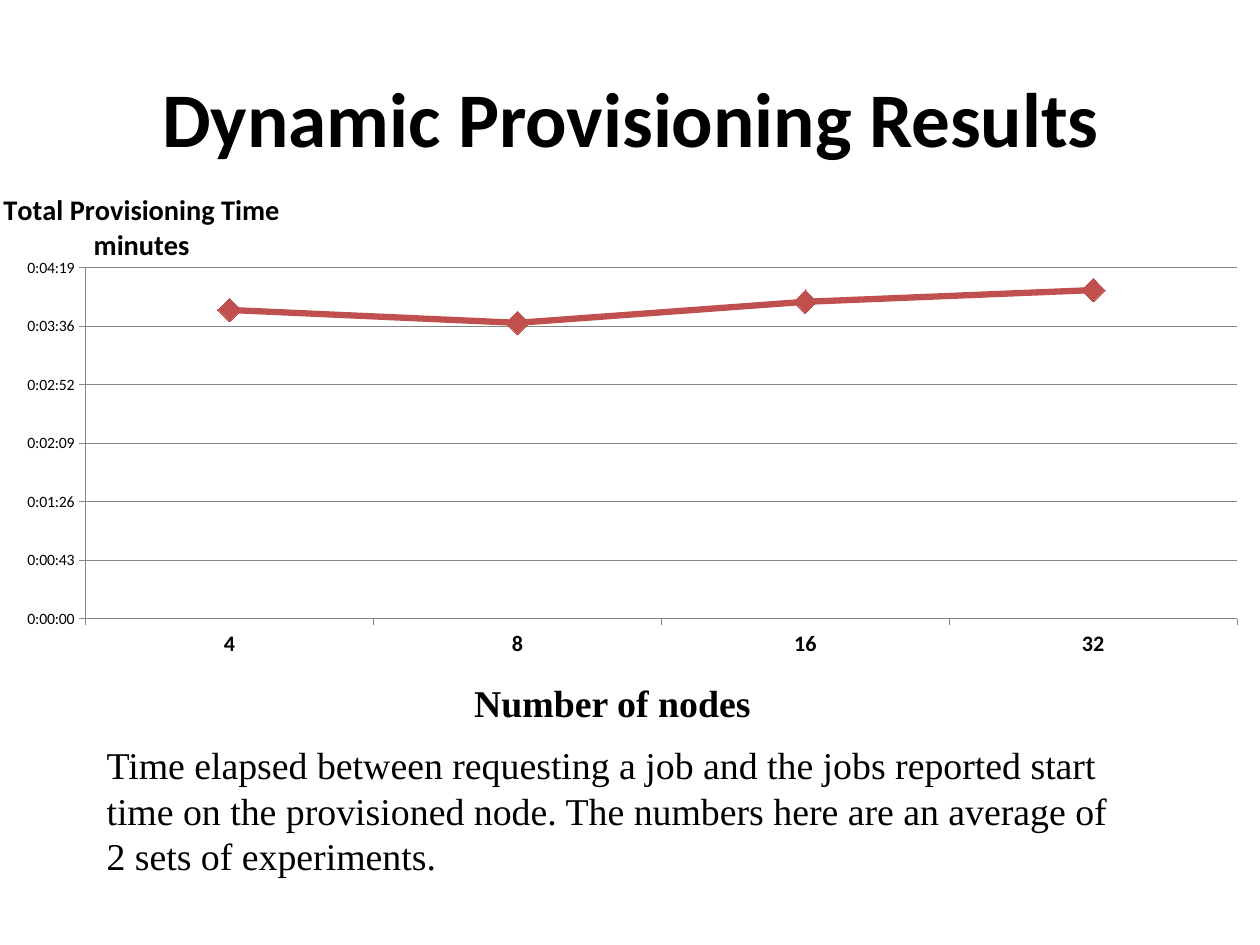
from lxml.etree import SubElement
from pptx import Presentation
from pptx.chart.data import CategoryChartData
from pptx.dml.color import RGBColor
from pptx.enum.chart import XL_CHART_TYPE as ChartType, XL_MARKER_STYLE as Marker, XL_TICK_MARK as Tick
from pptx.enum.text import MSO_ANCHOR as Anchor, MSO_AUTO_SIZE as AutoSize, PP_ALIGN as Align
from pptx.oxml import parse_xml
from pptx.oxml.ns import nsdecls, qn
from pptx.util import Pt

EMU_PER_PX = 9144
BLACK = RGBColor(0x00, 0x00, 0x00)
GREY = RGBColor(0x86, 0x86, 0x86)
RED = RGBColor(0xC0, 0x50, 0x4D)
SANS, SERIF = "Calibri", "Times New Roman"


def px(*lengths):
    return [length * EMU_PER_PX for length in lengths]


def set_layout(element, index, **settings):
    """Give a chart title or plot area a manual layout, as its child at index."""
    for old in element.findall(qn("c:layout")):
        element.remove(old)
    layout = parse_xml(f"<c:layout {nsdecls('c')}/>")
    manual = SubElement(layout, qn("c:manualLayout"))
    for name, value in settings.items():
        SubElement(manual, qn(f"c:{name}")).set("val", str(value))
    element.insert(index, layout)


class SlideBuilder:
    def __init__(self, presentation):
        self.slide = presentation.slides.add_slide(presentation.slide_layouts[5])

    def style(self, font, name, size, bold=False):
        font.name, font.size, font.bold = name, Pt(size), bold
        font.color.rgb = BLACK

    def fill_text(self, shape, text, name, size, bold, align, wrap=True):
        frame = shape.text_frame
        frame.text = text
        frame.word_wrap = wrap
        frame.margin_left, frame.margin_right = px(11, 11)
        frame.margin_top, frame.margin_bottom = px(6, 6)
        for paragraph in frame.paragraphs:
            paragraph.alignment = align
            for run in paragraph.runs:
                self.style(run.font, name, size, bold)
        return frame

    def title(self, text, *box):
        shape = self.slide.shapes.title
        shape.left, shape.top, shape.width, shape.height = px(*box)
        frame = self.fill_text(shape, text, SANS, 49, True, Align.CENTER)
        frame.vertical_anchor = Anchor.MIDDLE

    def text(self, text, *box, bold=False, wrap=True):
        shape = self.slide.shapes.add_textbox(*px(*box))
        frame = self.fill_text(shape, text, SERIF, 24, bold, Align.LEFT, wrap)
        frame.auto_size = AutoSize.SHAPE_TO_FIT_TEXT

    def axis(self, axis, size, bold):
        axis.major_tick_mark, axis.minor_tick_mark = Tick.OUTSIDE, Tick.NONE
        axis.format.line.color.rgb = GREY
        axis.format.line.width = Pt(0.75)
        self.style(axis.tick_labels.font, SANS, size, bold)

    def line_chart(self, title, categories, values, *box):
        data = CategoryChartData()
        data.categories = categories
        data.add_series("Series 1", values)
        chart = self.slide.shapes.add_chart(ChartType.LINE_MARKERS_STACKED, *px(*box), data).chart
        chart.has_legend = False
        self.style(chart.font, SANS, 10)

        chart.has_title = True
        chart.chart_title.include_in_layout = False
        frame = chart.chart_title.text_frame
        frame.text = title
        for paragraph in frame.paragraphs:
            paragraph.alignment = Align.CENTER
            for run in paragraph.runs:
                self.style(run.font, SANS, 18, True)
        set_layout(chart.chart_title._element, 1, xMode="edge", yMode="edge", x=0, y=0.02)
        set_layout(chart._chartSpace.chart.plotArea, 0, layoutTarget="inner",
                   xMode="edge", yMode="edge", x=0.068, y=0.182, w=0.914, h=0.711)

        self.axis(chart.category_axis, 14, True)
        value_axis = chart.value_axis
        self.axis(value_axis, 10, False)
        value_axis.minimum_scale, value_axis.maximum_scale = 0, 0.003
        value_axis.major_unit = 0.0005
        value_axis.tick_labels.number_format = "h:mm:ss"
        value_axis.tick_labels.number_format_is_linked = False
        value_axis.has_major_gridlines = True
        gridline = value_axis.major_gridlines.format.line
        gridline.color.rgb, gridline.width = GREY, Pt(0.75)

        plot = chart.plots[0]
        plot.vary_by_categories = False
        series = plot.series[0]
        series.smooth = False
        series.format.line.color.rgb, series.format.line.width = RED, Pt(4)
        series.marker.style, series.marker.size = Marker.DIAMOND, 15
        series.marker.format.fill.solid()
        series.marker.format.fill.fore_color.rgb = RED
        series.marker.format.line.color.rgb = RED


def main():
    presentation = Presentation()
    presentation.slide_width, presentation.slide_height = px(1111, 833)
    builder = SlideBuilder(presentation)
    builder.title("Dynamic Provisioning Results", 56, 33, 1000, 139)
    builder.line_chart("Total Provisioning Time\nminutes", ["4", "8", "16", "32"],
                       [0.00264, 0.00253, 0.00271, 0.00281], 0, 157, 1111, 435)
    builder.text("Time elapsed between requesting a job and the jobs reported start time on the "
                 "provisioned node. The numbers here are an average of 2 sets of experiments.",
                 83, 648, 917, 132)
    builder.text("Number of nodes", 407, 593, 269, 52, bold=True, wrap=False)
    presentation.save("out.pptx")


if __name__ == "__main__":
    main()
